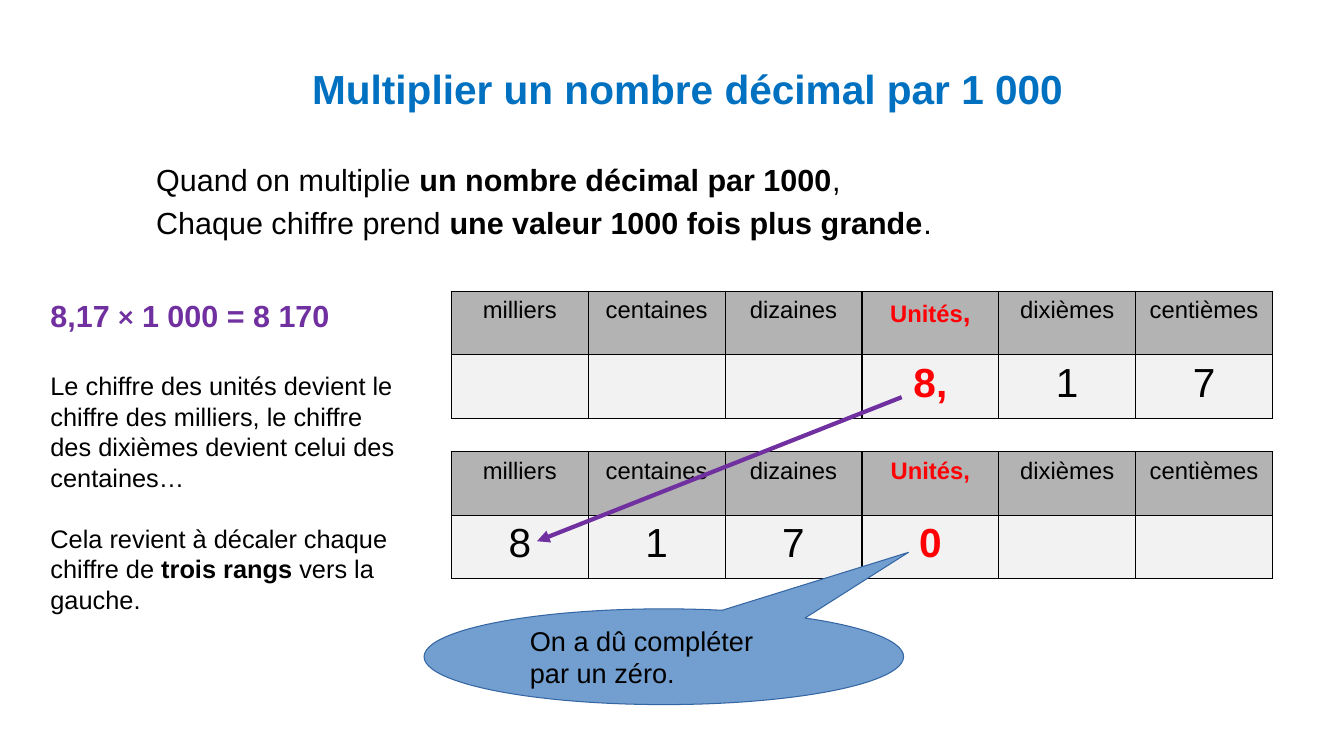
from dataclasses import dataclass, field
from typing import Any, NamedTuple

from lxml.etree import SubElement
from pptx import Presentation
from pptx.dml.color import RGBColor
from pptx.enum.shapes import MSO_CONNECTOR as Connector, MSO_SHAPE as Shape
from pptx.enum.text import MSO_ANCHOR as Anchor, MSO_AUTO_SIZE as AutoSize, PP_ALIGN as Align
from pptx.oxml.ns import qn
from pptx.util import Pt

BLACK, RED, BLUE, PURPLE = "000000", "FF0005", "0070C0", "7030A0"
HEADER_FILL, DIGIT_FILL = "B3B3B3", "F2F2F2"
LABEL_SIZE, DIGIT_SIZE = 17, 29
COLUMN_WIDTH, ROW_HEIGHT = 97.8, 45.4
UNITS_COLUMN = 3
INSETS = {"margin_left": Pt(8.6), "margin_right": Pt(8.6),
          "margin_top": Pt(4.3), "margin_bottom": Pt(4.3)}
FRAME_FORMAT = {**INSETS, "word_wrap": True, "auto_size": AutoSize.NONE,
                "vertical_anchor": Anchor.TOP}


class Span(NamedTuple):
    text: str
    size: float
    color: str = BLACK
    bold: bool = False
    font: str = "Arial"


class Box(NamedTuple):
    left: float
    top: float
    width: float
    height: float


@dataclass
class Para:
    spans: list[Span]
    format: dict[str, Any] = field(default_factory=dict)


class PlaceValueTable(NamedTuple):
    top: float
    units_label: list[Span]
    digits: list[str]


def rgb(color: str) -> RGBColor:
    return RGBColor.from_string(color)


def points(box: Box) -> list[Pt]:
    return [Pt(value) for value in box]


def apply(target: Any, values: dict[str, Any]) -> None:
    """Set each named attribute on the target."""
    for name, value in values.items():
        setattr(target, name, value)


def write(frame: Any, paras: list[Para]) -> None:
    for index, content in enumerate(paras):
        para = frame.paragraphs[0] if index == 0 else frame.add_paragraph()
        apply(para, {"space_before": Pt(0), "space_after": Pt(0), **content.format})
        for span in content.spans:
            run = para.add_run()
            run.text = span.text
            apply(run.font, {"size": Pt(span.size), "bold": span.bold, "name": span.font})
            run.font.color.rgb = rgb(span.color)


def fill_text(shape: Any, box: Box, paras: list[Para]) -> None:
    """Place a text shape, then format and write its frame."""
    apply(shape, dict(zip(("left", "top", "width", "height"), points(box))))
    apply(shape.text_frame, FRAME_FORMAT)
    write(shape.text_frame, paras)


def add_text(page: Any, box: Box, paras: list[Para]) -> None:
    fill_text(page.shapes.add_textbox(*points(box)), box, paras)


def remove_bullets(frame: Any) -> None:
    for para in frame.paragraphs:
        properties = para._p.get_or_add_pPr()
        properties.set("marL", "0")
        properties.set("indent", "0")
        SubElement(properties, qn("a:buNone"))


def add_borders(cell: Any) -> None:
    properties = cell._tc.get_or_add_tcPr()
    for side in ("lnL", "lnR", "lnT", "lnB"):
        line = SubElement(properties, qn(f"a:{side}"), w=str(Pt(1)))
        SubElement(SubElement(line, qn("a:solidFill")), qn("a:srgbClr"), val=BLACK)


def add_place_value_table(page: Any, content: PlaceValueTable) -> None:
    names = ["milliers", "centaines", "dizaines", "", "dixièmes", "centièmes"]
    labels = [[Span(name, LABEL_SIZE)] for name in names]
    labels[UNITS_COLUMN] = content.units_label
    digits = [[Span(digit, DIGIT_SIZE)] if digit else [] for digit in content.digits]
    digits[UNITS_COLUMN] = [Span(content.digits[UNITS_COLUMN], DIGIT_SIZE, RED, True)]

    box = Box(322.6, content.top, COLUMN_WIDTH * len(names), ROW_HEIGHT * 2)
    table = page.shapes.add_table(2, len(names), *points(box)).table
    apply(table, {"first_row": False, "horz_banding": False})
    for row, (fill, cells) in enumerate([(HEADER_FILL, labels), (DIGIT_FILL, digits)]):
        for column, spans in enumerate(cells):
            cell = table.cell(row, column)
            apply(cell, INSETS)
            add_borders(cell)
            cell.fill.solid()
            cell.fill.fore_color.rgb = rgb(fill)
            write(cell.text_frame, [Para(spans, {"alignment": Align.CENTER})])


def add_callout(page: Any) -> None:
    callout = page.shapes.add_shape(Shape.OVAL_CALLOUT, *points(Box(303.1, 434.9, 342.7, 68.4)))
    callout.shadow.inherit = False
    callout.adjustments[0], callout.adjustments[1] = 0.51, -1.09
    callout.fill.solid()
    callout.fill.fore_color.rgb = rgb("729FCF")
    callout.line.color.rgb = rgb("3465A4")
    callout.line.width = Pt(0.75)
    add_text(page, Box(370.1, 441.4, 205.9, 51.8),
             [Para([Span("On a dû compléter par un zéro.", 19.4)])])


def add_shift_arrow(page: Any) -> None:
    arrow = page.shapes.add_connector(Connector.STRAIGHT, Pt(644.4), Pt(283.7),
                                      Pt(383.8), Pt(386.6))
    arrow.line.color.rgb = rgb(PURPLE)
    arrow.line.width = Pt(3)
    SubElement(arrow.line._get_or_add_ln(), qn("a:tailEnd"), type="triangle")
    SubElement(arrow._element.spPr, qn("a:effectLst"))


def main() -> None:
    deck = Presentation()
    apply(deck, {"slide_width": Pt(960.48), "slide_height": Pt(540)})
    page = deck.slides.add_slide(deck.slide_layouts[1])
    title, rule = page.placeholders

    fill_text(title, Box(151.2, 41, 681.1, 41), [
        Para([Span("Multiplier un nombre décimal par 1 000", 29, BLUE, True)],
             {"alignment": Align.CENTER})])

    rule_size, spacing = 21.8, {"line_spacing": 1.2}
    fill_text(rule, Box(103, 105.1, 754.6, 82.1), [
        Para([Span("Quand on multiplie ", rule_size),
              Span("un nombre décimal par 1000", rule_size, bold=True),
              Span(",", rule_size)], spacing),
        Para([Span("Chaque chiffre prend ", rule_size),
              Span("une valeur 1000 fois plus grande", rule_size, bold=True),
              Span(".", rule_size)], spacing)])
    remove_bullets(rule.text_frame)

    note_size = 18.1
    add_text(page, Box(27.4, 208.1, 267.1, 279.4), [
        Para([Span("8,17 ", rule_size, PURPLE, True),
              Span("×", rule_size, PURPLE, True, "Calibri"),
              Span(" 1 000 = 8 170", rule_size, PURPLE, True)]),
        Para([Span("Le chiffre des unités devient le chiffre des milliers, le chiffre "
                   "des dixièmes devient celui des centaines…", note_size)],
             {"space_before": Pt(26)}),
        Para([Span("Cela revient à décaler chaque chiffre de", note_size),
              Span(" trois rangs", note_size, bold=True),
              Span(" vers la gauche.", note_size)],
             {"space_before": Pt(22)})])

    for content in (
        PlaceValueTable(208.1, [Span("Unités", LABEL_SIZE, RED, True), Span(",", 20, RED, True)],
                        ["", "", "", "8,", "1", "7"]),
        PlaceValueTable(322.6, [Span("Unités,", LABEL_SIZE, RED, True)],
                        ["8", "1", "7", "0", "", ""]),
    ):
        add_place_value_table(page, content)

    add_callout(page)
    add_shift_arrow(page)
    deck.save("out.pptx")


if __name__ == "__main__":
    main()
